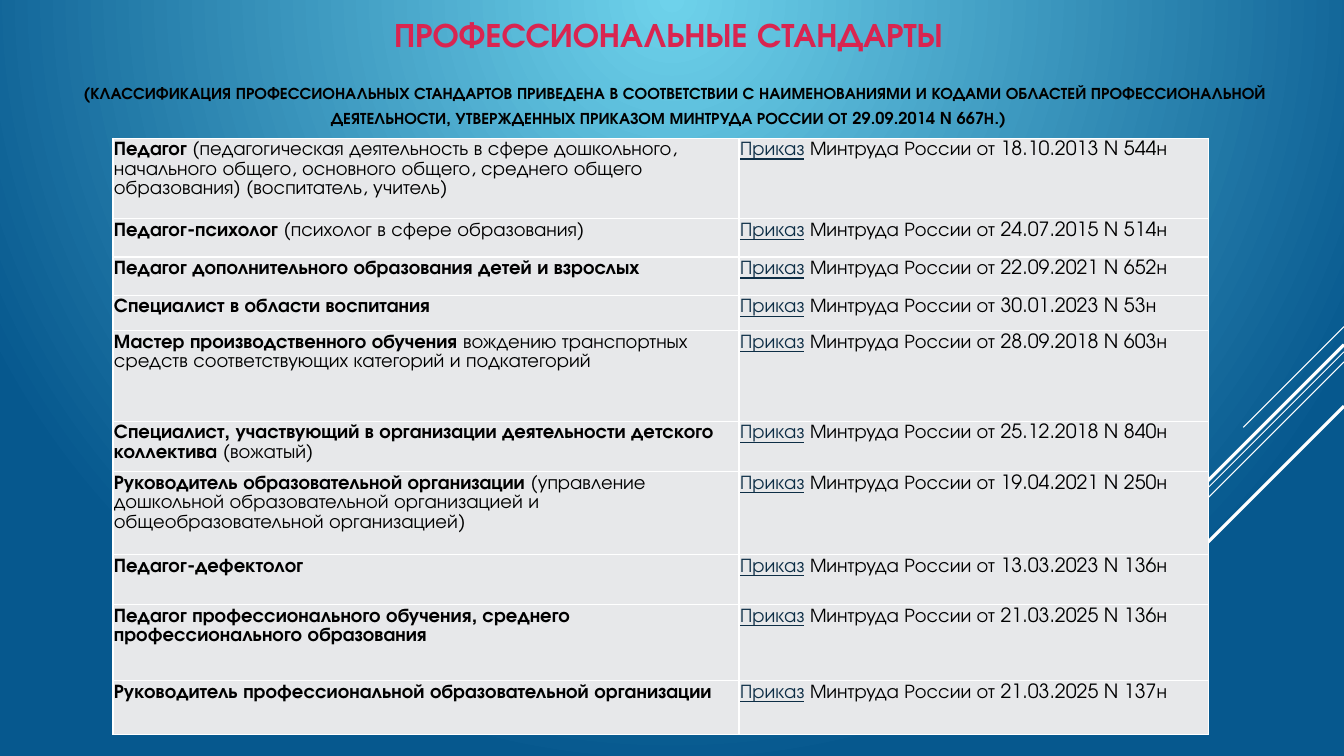
"""Builds a slide that lists the professional standards for teaching staff."""
from lxml.etree import SubElement
from pptx import Presentation
from pptx.dml.color import RGBColor
from pptx.enum.shapes import MSO_CONNECTOR
from pptx.enum.text import MSO_ANCHOR, PP_ALIGN
from pptx.oxml import parse_xml
from pptx.oxml.ns import nsdecls, qn
from pptx.util import Inches, Pt

FONT = "TeX Gyre Adventor"
WHITE, BLACK, RED = "FFFFFF", "000000", "D92550"
LINK, CELL = "0D2E46", "E7E8EA"
GLOW, DEEP = "6ED2EB", "06588E"

HEADING = "ПРОФЕССИОНАЛЬНЫЕ СТАНДАРТЫ"
SUBHEADING = (
    "(КЛАССИФИКАЦИЯ ПРОФЕССИОНАЛЬНЫХ СТАНДАРТОВ ПРИВЕДЕНА В СООТВЕТСТВИИ "
    "С НАИМЕНОВАНИЯМИ И КОДАМИ ОБЛАСТЕЙ ПРОФЕССИОНАЛЬНОЙ ДЕЯТЕЛЬНОСТИ, "
    "УТВЕРЖДЕННЫХ ПРИКАЗОМ МИНТРУДА РОССИИ ОТ 29.09.2014 N 667Н.)"
)

# row height, job, details, date and number of the order
STANDARDS = [
    (0.8, "Педагог", " (педагогическая деятельность в сфере дошкольного, начального общего, "
     "основного общего, среднего общего образования) (воспитатель, учитель)", "18.10.2013 N 544н"),
    (0.38, "Педагог-психолог", " (психолог в сфере образования)", "24.07.2015 N 514н"),
    (0.38, "Педагог дополнительного образования детей и взрослых", "", "22.09.2021 N 652н"),
    (0.35, "Специалист в области воспитания", "", "30.01.2023 N 53н"),
    (0.9, "Мастер производственного обучения ", "вождению транспортных средств "
     "соответствующих категорий и подкатегорий", "28.09.2018 N 603н"),
    (0.5, "Специалист, участвующий в организации деятельности детского коллектива ",
     "(вожатый)", "25.12.2018 N 840н"),
    (0.82, "Руководитель образовательной организации ", "(управление дошкольной "
     "образовательной организацией и общеобразовательной организацией)", "19.04.2021 N 250н"),
    (0.5, "Педагог-дефектолог", "", "13.03.2023 N 136н"),
    (0.75, "Педагог профессионального обучения, среднего профессионального образования",
     "", "21.03.2025 N 136н"),
    (0.54, "Руководитель профессиональной образовательной организации", "", "21.03.2025 N 137н"),
]
COLUMN_WIDTHS = (6.21, 4.66)
TABLE_LEFT, TABLE_TOP = 1.12, 1.37

SLIDE_WIDTH = 13.33
DIAGONALS = [(3.24, 1, 0.75), (3.49, 3.26, 0.75), (3.59, 2.07, 0.75),
             (3.42, 1.91, 2.25), (4.03, 1.39, 2.25)]


def color(value):
    return RGBColor.from_string(value)


def add_run(paragraph, text, size, shade, bold=False, underline=False):
    run = paragraph.add_run()
    run.text = text
    font = run.font
    font.name, font.size, font.bold, font.underline = FONT, Pt(size), bold, underline
    font.color.rgb = color(shade)


def paint_background(slide):
    fill = slide.background.fill
    fill.gradient()
    for stop, shade, position in zip(fill.gradient_stops, (GLOW, DEEP), (0, 1)):
        stop.color.rgb = color(shade)
        stop.position = position
    gradient = slide.background._cSld.find(".//" + qn("a:gradFill"))
    gradient.replace(gradient.find(qn("a:lin")), parse_xml(
        f'<a:path {nsdecls("a")} path="circle"><a:fillToRect b="100000"/></a:path>'))


def add_diagonals(slide):
    for top, run_length, weight in DIAGONALS:
        line = slide.shapes.add_connector(
            MSO_CONNECTOR.STRAIGHT, Inches(SLIDE_WIDTH), Inches(top),
            Inches(SLIDE_WIDTH - run_length), Inches(top + run_length))
        line.line.color.rgb = color(WHITE)
        line.line.width = Pt(weight)
        SubElement(line._element.spPr, qn("a:effectLst"))


def style_cell(cell):
    cell.margin_left = cell.margin_right = Inches(0.01)
    cell.margin_top = cell.margin_bottom = Inches(0.02)
    properties = cell._tc.get_or_add_tcPr()
    for side in ("lnL", "lnR", "lnT", "lnB"):
        properties.append(parse_xml(
            f'<a:{side} {nsdecls("a")} w="{Pt(1)}"><a:solidFill>'
            f'<a:srgbClr val="{WHITE}"/></a:solidFill></a:{side}>'))
    cell.fill.solid()
    cell.fill.fore_color.rgb = color(CELL)
    paragraph = cell.text_frame.paragraphs[0]
    paragraph.line_spacing = 1.07
    paragraph.space_after = Pt(8)
    return paragraph


def add_standards(slide):
    table = slide.shapes.add_table(
        len(STANDARDS), len(COLUMN_WIDTHS), Inches(TABLE_LEFT), Inches(TABLE_TOP),
        Inches(sum(COLUMN_WIDTHS)), Inches(sum(row[0] for row in STANDARDS))).table
    for column, width in zip(table.columns, COLUMN_WIDTHS):
        column.width = Inches(width)
    for row, (height, job, details, order) in zip(table.rows, STANDARDS):
        row.height = Inches(height)
        job_text, order_text = [style_cell(cell) for cell in row.cells]
        add_run(job_text, job, 14, BLACK, bold=True)
        if details:
            add_run(job_text, details, 14, BLACK)
        add_run(order_text, "Приказ", 14, LINK, underline=True)
        add_run(order_text, f" Минтруда России от {order}", 14, BLACK)


def add_title(slide):
    box = slide.shapes.add_textbox(Inches(0.47), Inches(0.11), Inches(12.32), Inches(1.18))
    frame = box.text_frame
    frame.word_wrap = True
    frame.vertical_anchor = MSO_ANCHOR.MIDDLE
    paragraph = frame.paragraphs[0]
    paragraph.alignment = PP_ALIGN.CENTER
    add_run(paragraph, HEADING, 24.3, RED, bold=True)
    paragraph.add_line_break()
    add_run(paragraph, " ", 32.4, WHITE, bold=True)
    add_run(paragraph, SUBHEADING, 11.7, BLACK, bold=True)


def main():
    presentation = Presentation()
    presentation.slide_width = Inches(SLIDE_WIDTH)
    presentation.slide_height = Inches(7.5)
    slide = presentation.slides.add_slide(presentation.slide_layouts[6])
    paint_background(slide)
    add_diagonals(slide)
    add_standards(slide)
    add_title(slide)
    presentation.save("out.pptx")


if __name__ == "__main__":
    main()
